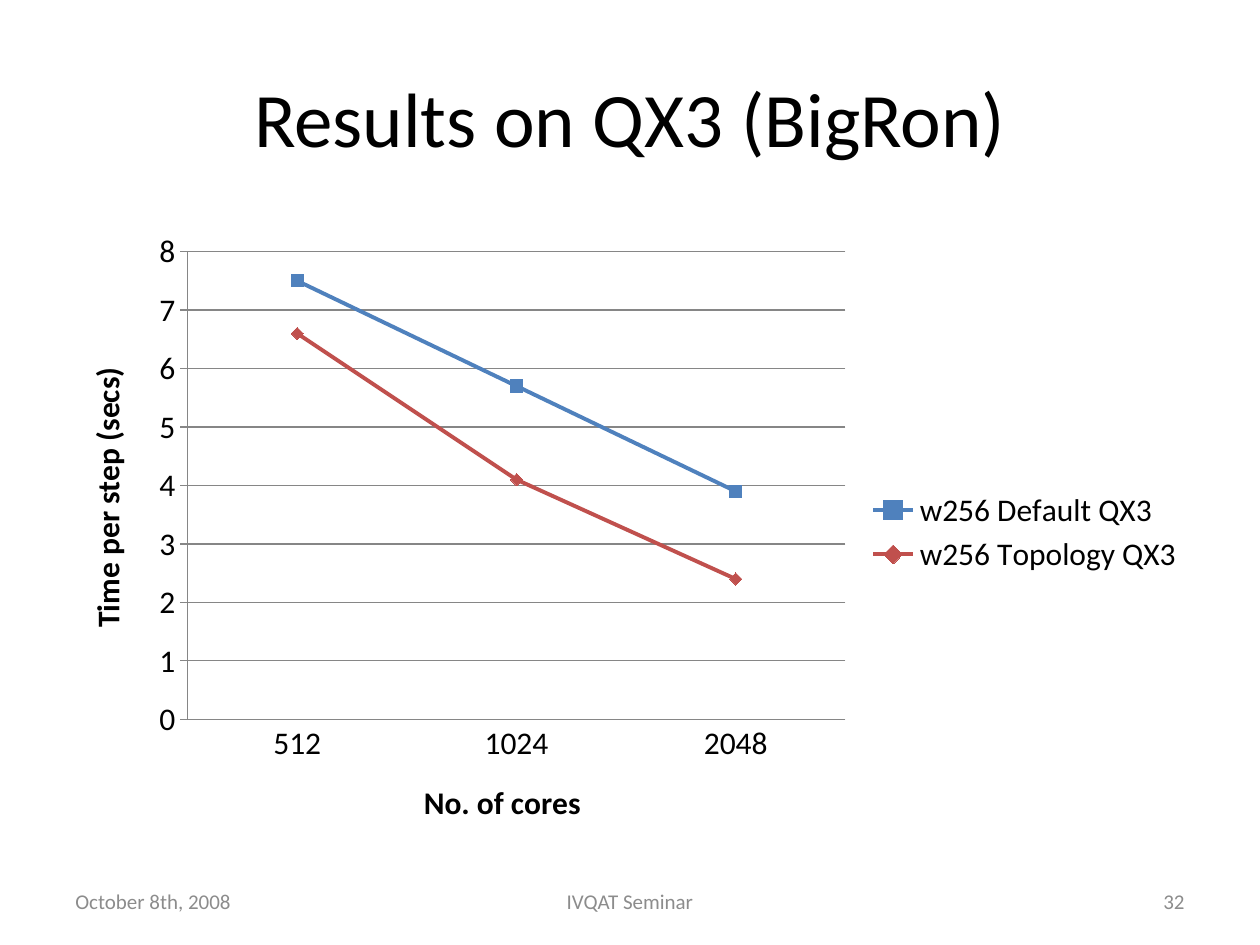
from dataclasses import dataclass

from lxml import etree
from pptx import Presentation
from pptx.chart.data import CategoryChartData
from pptx.dml.color import RGBColor
from pptx.enum.chart import XL_CHART_TYPE, XL_LEGEND_POSITION, XL_MARKER_STYLE, XL_TICK_MARK
from pptx.enum.text import MSO_ANCHOR, PP_ALIGN
from pptx.oxml.ns import qn
from pptx.util import Inches, Pt

LEFT, CENTER, RIGHT = PP_ALIGN.LEFT, PP_ALIGN.CENTER, PP_ALIGN.RIGHT
MIDDLE = MSO_ANCHOR.MIDDLE
LINE_MARKERS = XL_CHART_TYPE.LINE_MARKERS
LEGEND_RIGHT = XL_LEGEND_POSITION.RIGHT
SQUARE, DIAMOND = XL_MARKER_STYLE.SQUARE, XL_MARKER_STYLE.DIAMOND
NO_TICK, CROSS = XL_TICK_MARK.NONE, XL_TICK_MARK.CROSS


@dataclass(frozen=True)
class Theme:
    font: str = "Calibri"
    ink: str = "000000"
    muted: str = "8C8C8C"
    rule: str = "868686"
    series: tuple = ("4F81BD", "C0504D")
    title_size: int = 44
    chart_size: int = 18
    footer_size: int = 12


def style_font(font, family, size, color, bold=False):
    font.name, font.size, font.bold = family, Pt(size), bold
    font.color.rgb = RGBColor.from_string(color)


def write(frame, text, *, align=LEFT, **font_format):
    frame.word_wrap = True
    paragraph = frame.paragraphs[0]
    paragraph.alignment = align
    run = paragraph.add_run()
    run.text = text
    style_font(run.font, **font_format)


class SlideBuilder:
    def __init__(self, deck, theme):
        self.theme = theme
        self.width, self.height = deck.slide_width, deck.slide_height
        self.slide = deck.slides.add_slide(deck.slide_layouts[5])

    def box(self, x, y, w, h):
        return (round(x * self.width), round(y * self.height),
                round(w * self.width), round(h * self.height))

    def title(self, text, *area):
        heading = self.slide.shapes.title
        heading.left, heading.top, heading.width, heading.height = self.box(*area)
        heading.text_frame.vertical_anchor = MIDDLE
        write(heading.text_frame, text, align=CENTER, family=self.theme.font,
              size=self.theme.title_size, color=self.theme.ink)

    def footer(self, text, align, *area):
        frame = self.slide.shapes.add_textbox(*self.box(*area)).text_frame
        frame.vertical_anchor = MIDDLE
        write(frame, text, align=align, family=self.theme.font,
              size=self.theme.footer_size, color=self.theme.muted)

    def axis(self, axis, caption, tick, rotation=0):
        axis.major_tick_mark, axis.minor_tick_mark = tick, NO_TICK
        self.line(axis.format.line, self.theme.rule, 0.75)
        frame = axis.axis_title.text_frame
        write(frame, caption, align=CENTER, family=self.theme.font,
              size=self.theme.chart_size, color=self.theme.ink, bold=True)
        body = axis.axis_title._element.find(".//" + qn("a:bodyPr"))
        body.set("rot", str(rotation * 60000))
        body.set("vert", "horz")

    def line(self, line, color, width):
        line.color.rgb = RGBColor.from_string(color)
        line.width = Pt(width)

    def plot_layout(self, chart, **shares):
        area = chart._chartSpace.find(".//" + qn("c:plotArea"))
        for previous in area.findall(qn("c:layout")):
            area.remove(previous)
        layout = etree.Element(qn("c:layout"))
        area.insert(0, layout)
        manual = etree.SubElement(layout, qn("c:manualLayout"))
        settings = {"layoutTarget": "inner", "xMode": "edge", "yMode": "edge", **shares}
        for tag, value in settings.items():
            etree.SubElement(manual, qn("c:" + tag)).set("val", str(value))

    def line_chart(self, cores, timings, *area):
        data = CategoryChartData()
        data.categories = cores
        for name, seconds in timings.items():
            data.add_series(name, seconds)
        chart = self.slide.shapes.add_chart(LINE_MARKERS, *self.box(*area), data).chart
        style_font(chart.font, self.theme.font, self.theme.chart_size, self.theme.ink)
        chart.has_title = False
        chart.has_legend = True
        chart.legend.position = LEGEND_RIGHT
        chart.legend.include_in_layout = False
        self.plot_layout(chart, x=0.11, y=0.05, w=0.58, h=0.75)

        self.axis(chart.category_axis, "No. of cores", NO_TICK)
        step_time = chart.value_axis
        self.axis(step_time, "Time per step (secs)", CROSS, rotation=-90)
        step_time.minimum_scale, step_time.maximum_scale, step_time.major_unit = 0, 8, 1
        step_time.has_major_gridlines = True
        self.line(step_time.major_gridlines.format.line, self.theme.rule, 0.75)

        plot = chart.plots[0]
        plot.vary_by_categories = False
        markers = ((SQUARE, 7), (DIAMOND, 7))
        for series, color, (symbol, size) in zip(plot.series, self.theme.series, markers):
            series.smooth = False
            self.line(series.format.line, color, 2.25)
            series.marker.style, series.marker.size = symbol, size
            series.marker.format.fill.solid()
            series.marker.format.fill.fore_color.rgb = RGBColor.from_string(color)
            self.line(series.marker.format.line, color, 0.75)


def main():
    deck = Presentation()
    deck.slide_width, deck.slide_height = Inches(10), Inches(7.5)
    results = SlideBuilder(deck, Theme())
    margin, content = 0.05, 0.9
    results.title("Results on QX3 (BigRon)", margin, 0.04, content, 1 / 6)
    results.line_chart(
        ("512", "1024", "2048"),
        {"w256 Default QX3": (7.5, 5.7, 3.9), "w256 Topology QX3": (6.6, 4.1, 2.4)},
        margin, 0.7 / 3, content, 0.66)

    side, middle = 0.233, 0.317
    footers = (("October 8th, 2008", LEFT, margin, side),
               ("IVQAT Seminar", CENTER, (1 - middle) / 2, middle),
               ("32", RIGHT, 1 - margin - side, side))
    for text, align, x, width in footers:
        results.footer(text, align, x, 0.927, width, 0.053)
    deck.save("out.pptx")


if __name__ == "__main__":
    main()
